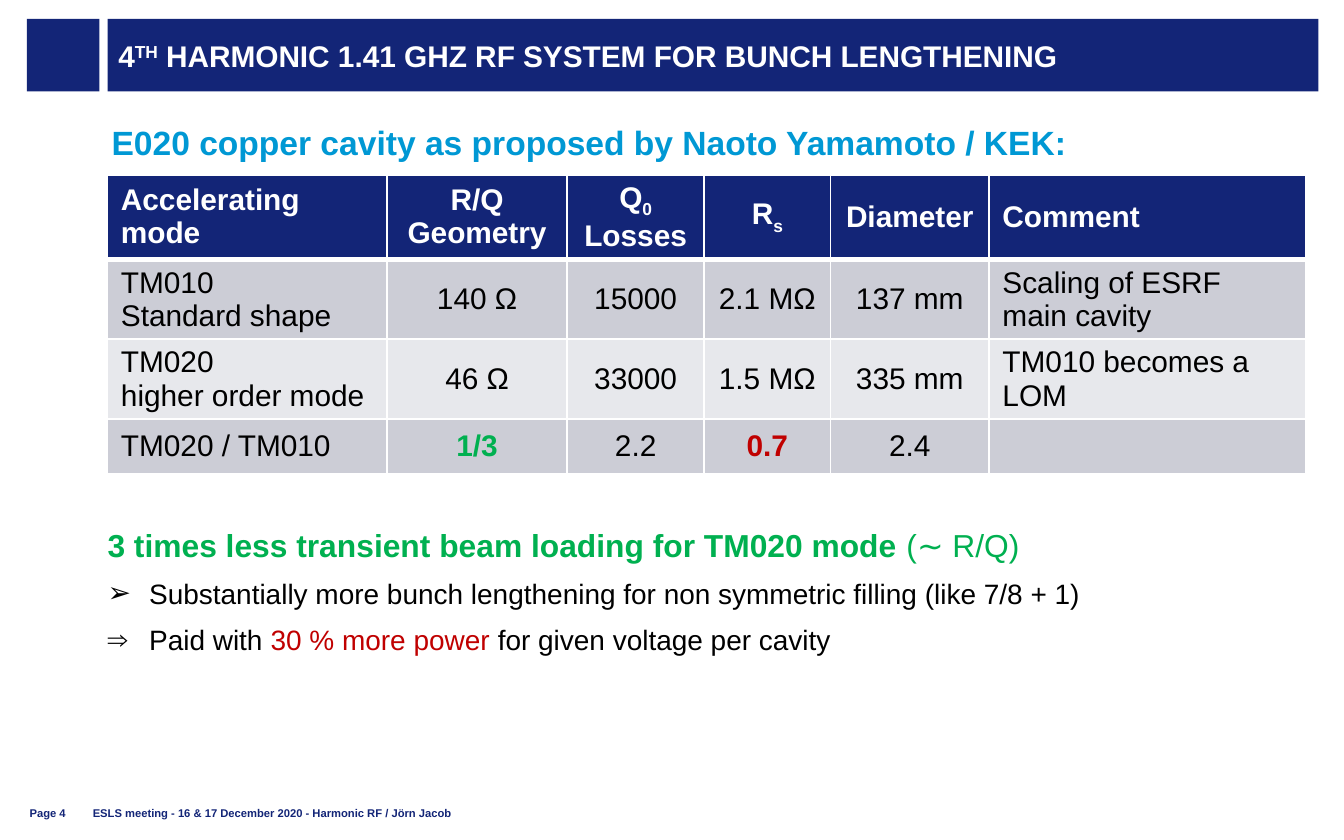
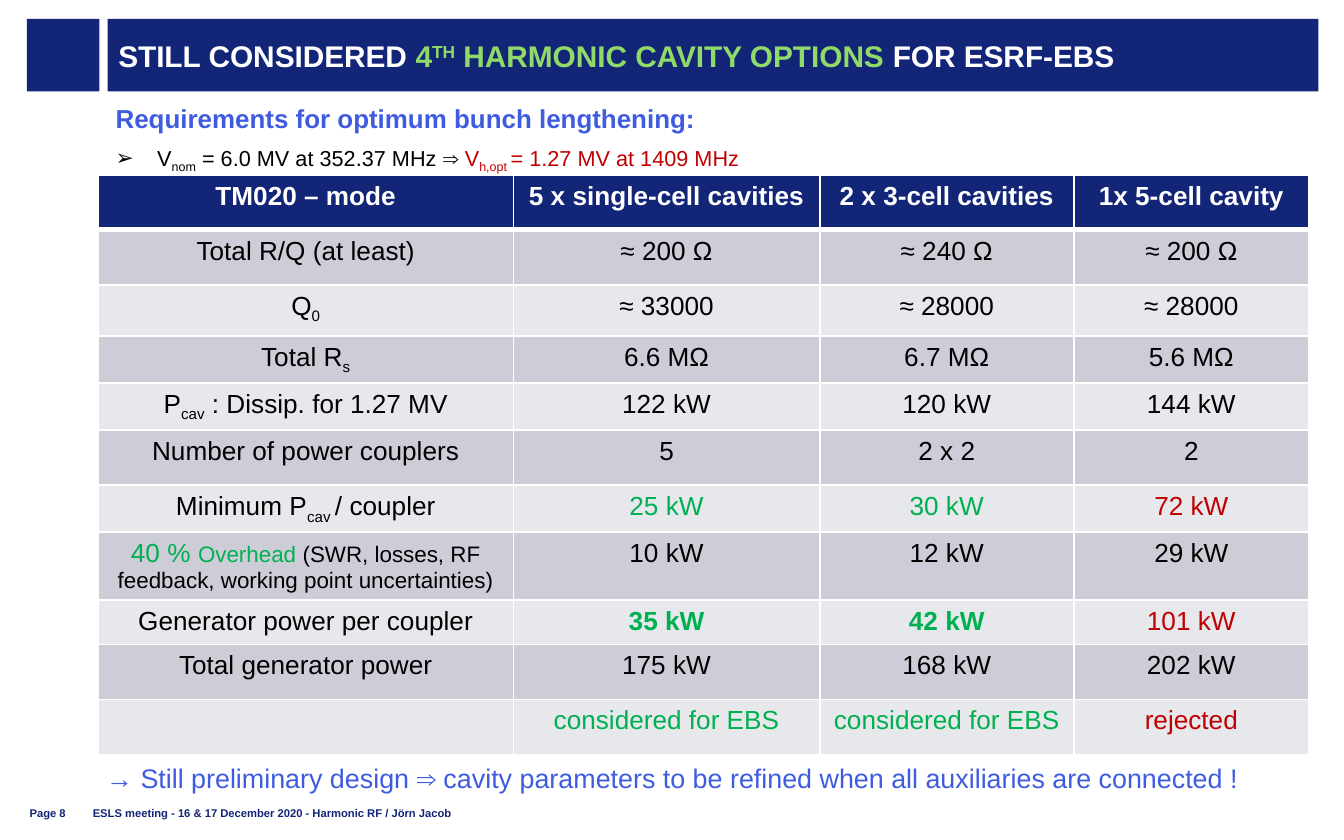
from dataclasses import dataclass
from typing import Optional

from lxml.etree import SubElement
from pptx import Presentation
from pptx.dml.color import RGBColor
from pptx.enum.shapes import MSO_SHAPE
from pptx.enum.text import MSO_ANCHOR, MSO_AUTO_SIZE, PP_ALIGN
from pptx.oxml.ns import qn
from pptx.util import Inches, Pt

NAVY, WHITE, BLACK = "132577", "FFFFFF", "000000"
GREEN, RED, LIME = "00B050", "C00000", "90DB68"
SKY, BLUE = "0098D4", "3F5CE0"
BANDS = ("CCCDD6", "E7E8EC")
FOOTER = "ESLS meeting - 16 & 17 December 2020 - Harmonic RF / Jörn Jacob"


@dataclass
class Span:
    """Hold a stretch of text and what sets it apart from its paragraph."""
    text: str
    color: Optional[str] = None
    bold: Optional[bool] = None
    size: Optional[float] = None
    baseline: int = 0


@dataclass
class Para:
    """Hold the spans of a paragraph and its format."""
    spans: object
    size: float
    color: str = BLACK
    bold: bool = False
    align: PP_ALIGN = PP_ALIGN.LEFT
    bullet: str = ""
    line_spacing: Optional[float] = None
    after: float = 0


def rgb(color):
    """Turn a hex string into a colour."""
    return RGBColor.from_string(color)


def sub(text, color=None):
    """Make a subscript span."""
    return Span(text, color, baseline=-25)


def sup(text, color=None):
    """Make a superscript span."""
    return Span(text, color, baseline=30)


def good(text, bold=None):
    """Make a green span."""
    return Span(text, GREEN, bold)


def bad(text, bold=None):
    """Make a red span."""
    return Span(text, RED, bold)


class Sheet:
    """Hold the deck, its style and the current slide, on a grid of 100 columns."""

    font = "Arial"

    def __init__(self):
        """Start a deck of 100 by 62.5 square grid units."""
        self.deck = Presentation()
        self.deck.slide_width = Inches(10)
        self.deck.slide_height = Inches(6.25)
        self.unit = self.deck.slide_width / 100
        self.page = None

    def length(self, units):
        """Turn grid units into a length."""
        return round(units * self.unit)

    def place(self, *units):
        """Turn grid units into left, top, width and height."""
        return [self.length(value) for value in units]

    def fill_paragraph(self, paragraph, para):
        """Write one paragraph and format its runs."""
        spans = para.spans if isinstance(para.spans, list) else [para.spans]
        spans = [Span(span) if isinstance(span, str) else span for span in spans]
        paragraph.text = spans[0].text
        for span in spans[1:]:
            paragraph.add_run().text = span.text
        if para.bullet:
            properties = paragraph._p.get_or_add_pPr()
            properties.set("marL", str(self.length(3.1)))
            properties.set("indent", str(self.length(-3.1)))
            SubElement(properties, qn("a:buFont"), typeface=self.font)
            SubElement(properties, qn("a:buChar"), char=para.bullet)
        paragraph.alignment = para.align
        paragraph.space_before = Pt(0)
        paragraph.space_after = Pt(para.after)
        if para.line_spacing:
            paragraph.line_spacing = para.line_spacing
        for run, span in zip(paragraph.runs, spans):
            run.font.name = self.font
            run.font.size = Pt(span.size or para.size)
            run.font.bold = para.bold if span.bold is None else span.bold
            run.font.color.rgb = rgb(span.color or para.color)
            if span.baseline:
                run.font._element.set("baseline", str(span.baseline * 1000))

    def fill_frame(self, frame, paras):
        """Write paragraphs into a text frame."""
        for index, para in enumerate(paras):
            paragraph = frame.add_paragraph() if index else frame.paragraphs[0]
            self.fill_paragraph(paragraph, para)

    def set_insets(self, frame, side=0):
        """Set the insets of a text frame and let it wrap."""
        frame.word_wrap = True
        frame.auto_size = MSO_AUTO_SIZE.NONE
        frame.margin_left = frame.margin_right = self.length(side)
        frame.margin_top = frame.margin_bottom = 0

    def start_page(self, title, number):
        """Add a slide with its title band, square and footer."""
        self.page = self.deck.slides.add_slide(self.deck.slide_layouts[5])
        square = self.page.shapes.add_shape(
            MSO_SHAPE.RECTANGLE, *self.place(2, 1.4, 5.4, 5.4))
        square.shadow.inherit = False
        band = self.page.shapes.title
        band.left, band.top, band.width, band.height = self.place(8, 1.4, 90.1, 5.4)
        for shape in (square, band):
            shape.fill.solid()
            shape.fill.fore_color.rgb = rgb(NAVY)
            shape.line.fill.background()
        self.set_insets(band.text_frame, 0.8)
        band.text_frame.vertical_anchor = MSO_ANCHOR.MIDDLE
        self.fill_frame(band.text_frame, [Para(title, 16, WHITE, True)])
        for left, width, text in ((6.9, 66.9, FOOTER), (2.2, 4.5, f"Page {number}")):
            self.text((left, 59.1, width, 1.9), Para(text, 6, NAVY, True),
                      anchor=MSO_ANCHOR.BOTTOM)

    def text(self, area, *paras, anchor=MSO_ANCHOR.TOP):
        """Add a text box."""
        box = self.page.shapes.add_textbox(*self.place(*area))
        self.set_insets(box.text_frame)
        box.text_frame.vertical_anchor = anchor
        self.fill_frame(box.text_frame, paras)

    def borders(self, cell, top, bottom):
        """Draw the white borders of a cell, with widths in points."""
        properties = cell._tc.get_or_add_tcPr()
        for side, width in (("L", 1), ("R", 1), ("T", top), ("B", bottom)):
            line = SubElement(properties, qn(f"a:ln{side}"), w=str(Pt(width)))
            solid = SubElement(line, qn("a:solidFill"))
            SubElement(solid, qn("a:srgbClr"), val=WHITE)

    def table(self, corner, columns, rows, content, size, anchor, left_columns=()):
        """Add a banded table; a tuple in a cell holds several paragraphs."""
        area = self.place(*corner, sum(columns), sum(rows))
        table = self.page.shapes.add_table(len(rows), len(columns), *area).table
        for column, width in zip(table.columns, columns):
            column.width = self.length(width)
        for row, height in zip(table.rows, rows):
            row.height = self.length(height)
        for i, line in enumerate(content):
            header = i == 0
            for j, entry in enumerate(line):
                cell = table.cell(i, j)
                self.borders(cell, 3 if i == 1 else 1, 3 if header else 1)
                cell.fill.solid()
                cell.fill.fore_color.rgb = rgb(NAVY if header else BANDS[(i - 1) % 2])
                cell.vertical_anchor = anchor
                if not entry:
                    continue
                align = PP_ALIGN.LEFT if j in left_columns else PP_ALIGN.CENTER
                parts = entry if isinstance(entry, tuple) else (entry,)
                self.fill_frame(cell.text_frame, [
                    Para(part, size, WHITE if header else BLACK, header, align)
                    for part in parts])


def cavity_modes(sheet):
    """Build the comparison of the two accelerating modes."""
    sheet.start_page(
        ["4", sup("TH"), " HARMONIC 1.41 GHZ RF SYSTEM FOR BUNCH LENGTHENING"], 4)
    sheet.text((8, 39.1, 90.1, 15.6),
               Para(["3 times less transient beam loading for TM020 mode ",
                     Span("(∼ R/Q)", bold=False)], 17, GREEN, True, after=6),
               Para("Substantially more bunch lengthening for non symmetric filling "
                    "(like 7/8 + 1)", 15, bullet="➢", line_spacing=1.05, after=6),
               Para(["Paid with ", bad("30 % more power "),
                     "for given voltage per cavity"],
                    15, bullet="⇒", line_spacing=1.05, after=6))
    content = [
        ["Accelerating mode", ("R/Q", "Geometry"), (["Q", sub("0")], "Losses"),
         ["R", sub("s")], "Diameter", "Comment"],
        [("TM010", "Standard shape"), "140 Ω", "15000", "2.1 MΩ", "137 mm",
         "Scaling of ESRF main cavity"],
        [("TM020", "higher order mode"), "46 Ω", "33000", "1.5 MΩ", "335 mm",
         "TM010 becomes a LOM"],
        ["TM020 / TM010", good("1/3", True), "2.2", bad("0.7", True), "2.4", ""],
    ]
    sheet.table((8, 13), [20.8, 13.4, 10.2, 9.4, 11.8, 23.6], [4.1] * 4, content,
                16, MSO_ANCHOR.MIDDLE, left_columns=(0, 5))
    sheet.text((8.3, 9.1, 90.1, 4.3),
               Para("E020 copper cavity as proposed by Naoto Yamamoto / KEK:",
                    18, SKY, True, after=6))


def cavity_options(sheet):
    """Build the comparison of the three cavity options."""
    sheet.start_page(
        ["STILL CONSIDERED ", Span("4", LIME), sup("TH", LIME),
         Span(" HARMONIC CAVITY OPTIONS ", LIME), "FOR ESRF-EBS"], 8)
    sheet.text((8.6, 7.6, 88.8, 5.5),
               Para("Requirements for optimum bunch lengthening:",
                    13.9, BLUE, True, after=6),
               Para(["V", sub("nom"), " = 6.0 MV at 352.37 MHz ⇒ ", bad("V"),
                     sub("h,opt ", RED), bad("= 1.27 MV at 1409 MHz")],
                    11.6, bullet="➢", line_spacing=0.95, after=5))
    content = [
        ["TM020 – mode", "5 x single-cell cavities", "2 x 3-cell cavities",
         "1x 5-cell cavity"],
        ["Total R/Q (at least)", "≈ 200 Ω", "≈ 240 Ω", "≈ 200 Ω"],
        [["Q", sub("0")], "≈ 33000", "≈ 28000", "≈ 28000"],
        [["Total R", sub("s")], "6.6 MΩ", "6.7 MΩ", "5.6 MΩ"],
        [["P", sub("cav"), " : Dissip. for 1.27 MV"], "122 kW", "120 kW", "144 kW"],
        ["Number of power couplers", "5", "2 x 2", "2"],
        [["Minimum P", sub("cav "), "/ coupler"],
         good("25 kW"), good("30 kW"), bad("72 kW")],
        [[good("40 % "), Span("Overhead ", GREEN, size=12),
          Span("(SWR, losses, RF feedback, working point uncertainties)", size=12)],
         "10 kW", "12 kW", "29 kW"],
        ["Generator power per coupler",
         good("35 kW", True), good("42 kW", True), bad("101 kW")],
        ["Total generator power", "175 kW", "168 kW", "202 kW"],
        ["", good("considered for EBS"), good("considered for EBS"), bad("rejected")],
    ]
    rows = [4.1, 4.1, 3.8, 3.1, 3, 4.1, 3.5, 4.1, 3.3, 4.1, 4.1]
    sheet.table((7.3, 13), [30.9, 22.8, 18.9, 17.5], rows, content,
                14, MSO_ANCHOR.TOP)
    sheet.text((7.9, 56.7, 88.8, 2.3),
               Para("→ Still preliminary design ⇒ cavity parameters to be refined "
                    "when all auxiliaries are connected !", 14.4, BLUE))


def main():
    """Build and save the deck."""
    sheet = Sheet()
    cavity_modes(sheet)
    cavity_options(sheet)
    sheet.deck.save("out.pptx")


if __name__ == "__main__":
    main()
